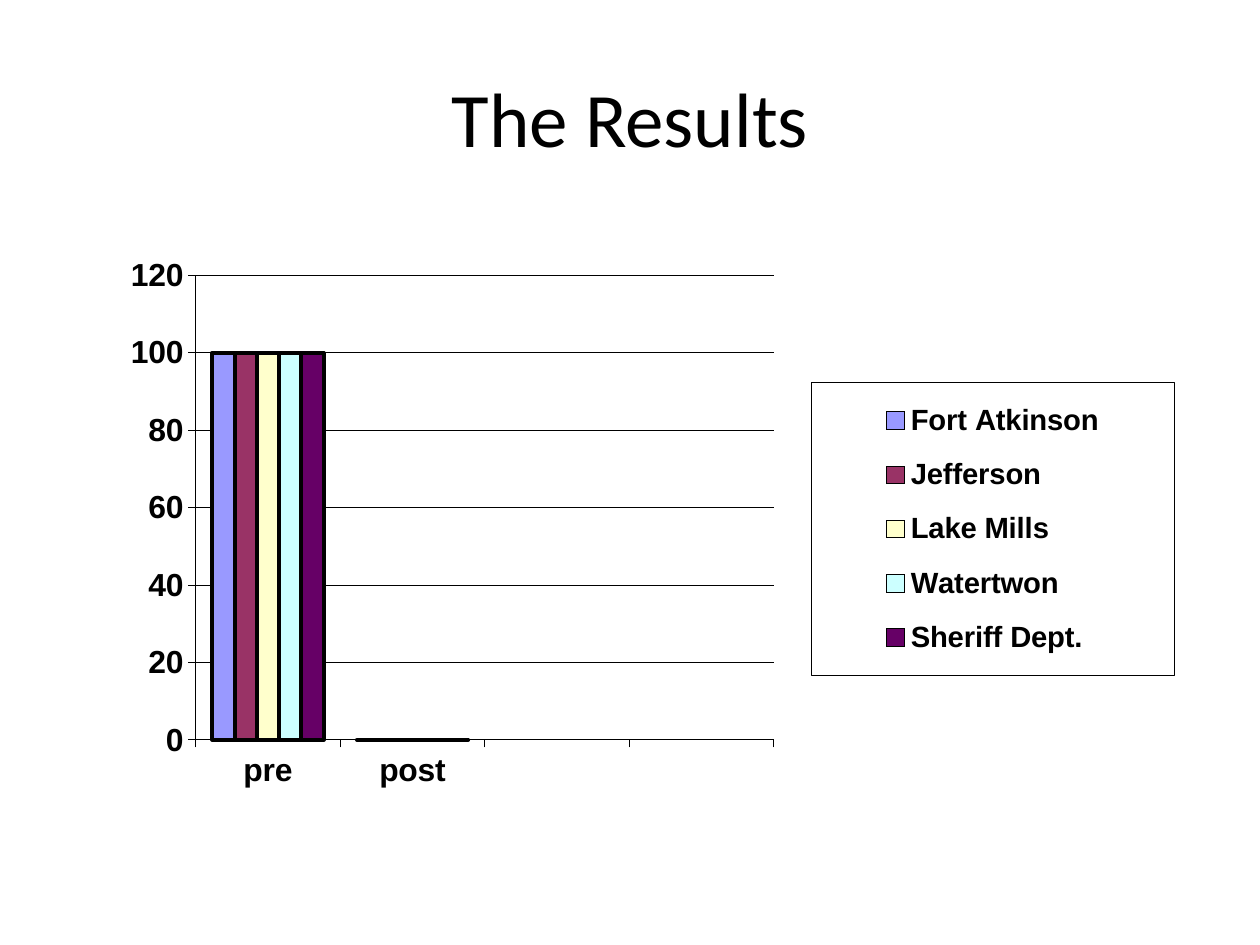
from dataclasses import dataclass

from pptx import Presentation
from pptx.chart.data import CategoryChartData
from pptx.dml.color import RGBColor as RGB
from pptx.enum.chart import (
    XL_CHART_TYPE as ChartType,
    XL_LEGEND_POSITION as LegendSide,
    XL_TICK_LABEL_POSITION as LabelSide,
    XL_TICK_MARK as Tick,
)
from pptx.enum.text import MSO_ANCHOR as Anchor, PP_ALIGN as Align
from pptx.oxml import parse_xml
from pptx.oxml.ns import nsdecls, qn
from pptx.util import Pt


@dataclass(frozen=True)
class Theme:
    ink: RGB = RGB(0, 0, 0)
    paper: RGB = RGB(255, 255, 255)
    title_font: str = "Calibri"
    chart_font: str = "Arial"
    title_size: float = 44
    axis_size: float = 18.2
    legend_size: float = 16.7
    thin: float = 0.55
    thick: float = 2.21


THEME = Theme()
DEPARTMENTS = {
    "Fort Atkinson": "9999FF",
    "Jefferson": "993366",
    "Lake Mills": "FFFFCC",
    "Watertwon": "CCFFFF",
    "Sheriff Dept.": "660066",
}
STAGES = ["pre", "post", "", ""]
RESULTS = [100, 0, None, None]


def style_font(font, face, size, bold=False):
    font.name, font.size, font.bold = face, Pt(size), bold
    font.color.rgb = THEME.ink


def style_line(line, width):
    line.color.rgb = THEME.ink
    line.width = Pt(width)


def manual_layout(x, y, w, h, inner=False):
    """Layout element whose values are fractions of the chart's box."""
    target = '<c:layoutTarget val="inner"/>' if inner else ""
    return parse_xml(
        f'<c:layout {nsdecls("c")}><c:manualLayout>{target}'
        '<c:xMode val="edge"/><c:yMode val="edge"/>'
        f'<c:x val="{x}"/><c:y val="{y}"/><c:w val="{w}"/><c:h val="{h}"/>'
        "</c:manualLayout></c:layout>"
    )


def add_title(slide, left, top, width, height):
    title = slide.shapes.title
    title.left, title.top = Pt(left), Pt(top)
    title.width, title.height = Pt(width), Pt(height)
    title.text_frame.vertical_anchor = Anchor.MIDDLE
    heading = title.text_frame.paragraphs[0]
    heading.alignment = Align.CENTER
    run = heading.add_run()
    run.text = "The Results"
    style_font(run.font, THEME.title_font, THEME.title_size)


def style_axes(chart):
    for axis in (chart.category_axis, chart.value_axis):
        axis.major_tick_mark, axis.minor_tick_mark = Tick.OUTSIDE, Tick.NONE
        style_font(axis.tick_labels.font, THEME.chart_font, THEME.axis_size, True)
        style_line(axis.format.line, THEME.thin)
    chart.category_axis.tick_label_position = LabelSide.LOW
    scale = chart.value_axis
    scale.minimum_scale, scale.maximum_scale, scale.major_unit = 0, 120, 20
    scale.has_major_gridlines = True
    style_line(scale.major_gridlines.format.line, THEME.thin)


def add_legend(chart):
    chart.has_legend = True
    legend = chart.legend
    legend.position = LegendSide.RIGHT
    legend.include_in_layout = False
    style_font(legend.font, THEME.chart_font, THEME.legend_size, True)
    # Position and frame
    box = chart.element.find(".//" + qn("c:legend"))
    for old in box.findall(qn("c:layout")):
        box.remove(old)
    overlay = box.find(qn("c:overlay"))
    overlay.addprevious(manual_layout(0.66, 0.26, 0.32, 0.47))
    overlay.addnext(parse_xml(
        f'<c:spPr {nsdecls("c", "a")}>'
        f'<a:solidFill><a:srgbClr val="{THEME.paper}"/></a:solidFill>'
        f'<a:ln w="{Pt(THEME.thin)}"><a:solidFill><a:srgbClr val="{THEME.ink}"/>'
        "</a:solidFill></a:ln></c:spPr>"
    ))


def add_results_chart(slide, left, top, width, height):
    results = CategoryChartData()
    results.categories = STAGES
    for department in DEPARTMENTS:
        results.add_series(department, RESULTS)
    chart = slide.shapes.add_chart(
        ChartType.COLUMN_CLUSTERED,
        Pt(left), Pt(top), Pt(width), Pt(height), results,
    ).chart
    chart.has_title = False
    style_font(chart.font, THEME.chart_font, THEME.axis_size, True)

    # Columns
    columns = chart.plots[0]
    columns.gap_width, columns.overlap = 150, 0
    columns.vary_by_categories = False
    for series, color in zip(columns.series, DEPARTMENTS.values()):
        series.format.fill.solid()
        series.format.fill.fore_color.rgb = RGB.from_string(color)
        style_line(series.format.line, THEME.thick)

    # Plot area
    area = chart.element.find(".//" + qn("c:plotArea"))
    for old in area.findall(qn("c:layout")):
        area.remove(old)
    area.insert(0, manual_layout(0.117, 0.088, 0.51, 0.745, inner=True))

    style_axes(chart)
    add_legend(chart)


def main():
    deck = Presentation()
    deck.slide_width, deck.slide_height = Pt(720), Pt(540)
    slide = deck.slides.add_slide(deck.slide_layouts[5])
    slide.background.fill.solid()
    slide.background.fill.fore_color.rgb = THEME.paper
    add_title(slide, 36, 21.6, 648, 90)
    add_results_chart(slide, 36, 126, 648, 356.4)
    deck.save("out.pptx")


if __name__ == "__main__":
    main()
